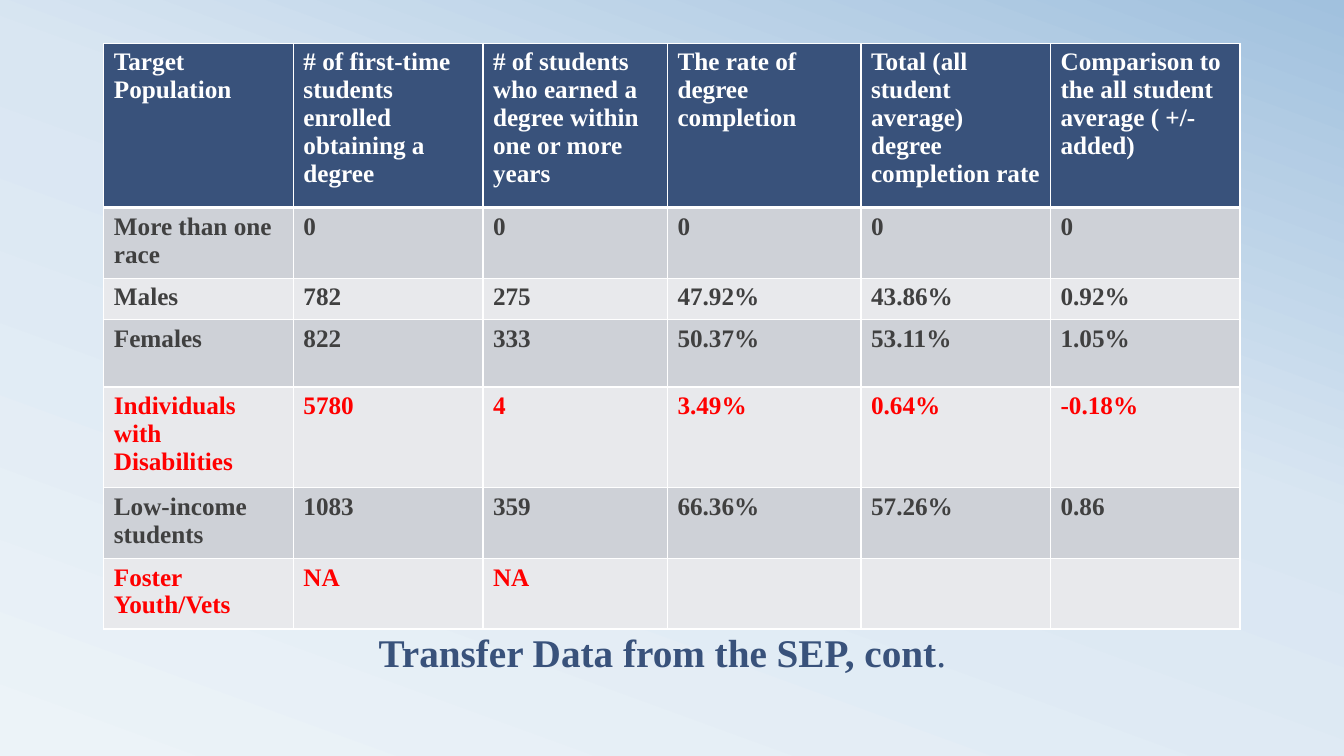
from copy import deepcopy
from dataclasses import dataclass

from lxml.etree import SubElement
from pptx import Presentation
from pptx.dml.color import RGBColor as RGB
from pptx.enum.text import MSO_ANCHOR as Anchor, PP_ALIGN as Align
from pptx.oxml.ns import qn
from pptx.slide import Slide
from pptx.table import _Cell as Cell
from pptx.text.text import _Run as Run
from pptx.util import Inches, Pt


@dataclass(frozen=True)
class Theme:
    font: str = "Times New Roman"
    navy: str = "39527B"
    white: str = "FFFFFF"
    text: str = "404040"
    alert: str = "FF0000"
    bands: tuple[str, str] = ("CED1D7", "E8E9EC")
    backdrop: tuple[tuple[float, str], ...] = ((0, "ECF3F8"), (0.58, "D9E6F2"), (1, "A1C1DE"))
    backdrop_angle: int = 70
    title_size: int = 28
    table_size: int = 18
    rule: int = 1
    header_rule: int = 3


@dataclass(frozen=True)
class Row:
    height: float
    values: tuple[str, ...]
    alert: bool = False


THEME = Theme()
COLUMNS = (1.88, 1.88, 1.83, 1.92, 1.88, 1.88)
ROWS = (
    Row(1.63, ("Target Population", "# of first-time students enrolled obtaining a degree",
               "# of students who earned a degree within one or more years",
               "The rate of degree completion",
               "Total (all student average) degree completion rate",
               "Comparison to the all student average ( +/- added)")),
    Row(0.65, ("More than one race", "0", "0", "0", "0", "0")),
    Row(0.41, ("Males", "782", "275", "47.92%", "43.86%", "0.92%")),
    Row(0.67, ("Females", "822", "333", "50.37%", "53.11%", "1.05%")),
    Row(0.93, ("Individuals with Disabilities", "5780", "4", "3.49%", "0.64%", "-0.18%"), True),
    Row(0.65, ("Low-income students", "1083", "359", "66.36%", "57.26%", "0.86")),
    Row(0.65, ("Foster Youth/Vets", "NA", "NA", "", "", ""), True),
)


def style_run(r: Run, size: int, color: str, bold: bool = True) -> None:
    """Apply the slide's font to a run."""
    r.font.name = THEME.font
    r.font.size = Pt(size)
    r.font.bold = bold
    r.font.color.rgb = RGB.from_string(color)


def draw_backdrop(s: Slide) -> None:
    """Fill the background with the three-stop gradient."""
    fill = s.background.fill
    fill.gradient()
    fill.gradient_angle = THEME.backdrop_angle
    stops = s.element.find(f".//{qn('a:gsLst')}")
    stops.append(deepcopy(stops[-1]))
    for stop, (position, color) in zip(fill.gradient_stops, THEME.backdrop):
        stop.position = position
        stop.color.rgb = RGB.from_string(color)


def draw_borders(cell: Cell, top: int, bottom: int) -> None:
    """Outline a cell in white with the given top and bottom widths."""
    tc_pr = cell._tc.get_or_add_tcPr()
    for side, width in (("L", THEME.rule), ("R", THEME.rule), ("T", top), ("B", bottom)):
        line = SubElement(tc_pr, qn(f"a:ln{side}"), w=str(Pt(width)))
        solid = SubElement(line, qn("a:solidFill"))
        SubElement(solid, qn("a:srgbClr"), val=THEME.white)


def draw_cell(cell: Cell, text: str, color: str, fill: str, top: int, bottom: int) -> None:
    """Write and style one table cell."""
    draw_borders(cell, top, bottom)
    cell.fill.solid()
    cell.fill.fore_color.rgb = RGB.from_string(fill)
    cell.text_frame.text = text
    for r in cell.text_frame.paragraphs[0].runs:
        style_run(r, THEME.table_size, color)


def draw_table(s: Slide) -> None:
    """Draw the completion-rate table."""
    table = s.shapes.add_table(
        len(ROWS), len(COLUMNS), Inches(1.03), Inches(0.43),
        Inches(sum(COLUMNS)), Inches(sum(row.height for row in ROWS))).table
    for column, width in zip(table.columns, COLUMNS):
        column.width = Inches(width)
    for i, row in enumerate(ROWS):
        table.rows[i].height = Inches(row.height)
        body_color = THEME.alert if row.alert else THEME.text
        color, fill = (body_color, THEME.bands[(i - 1) % 2]) if i else (THEME.white, THEME.navy)
        top = THEME.header_rule if i == 1 else THEME.rule
        bottom = THEME.header_rule if i == 0 else THEME.rule
        for j, value in enumerate(row.values):
            draw_cell(table.cell(i, j), value, color, fill, top, bottom)


def draw_title(s: Slide) -> None:
    """Draw the slide title below the table."""
    tf = s.shapes.add_textbox(Inches(0.57), Inches(5.58), Inches(12), Inches(1.17)).text_frame
    tf.word_wrap = True
    tf.vertical_anchor = Anchor.BOTTOM
    p = tf.paragraphs[0]
    p.alignment = Align.CENTER
    p.line_spacing = 0.8
    for text, bold in (("Transfer Data from the SEP, cont", True), (".", False)):
        r = p.add_run()
        r.text = text
        style_run(r, THEME.title_size, THEME.navy, bold)


def main() -> None:
    """Build and save the slide."""
    prs = Presentation()
    prs.slide_width, prs.slide_height = Inches(13.33), Inches(7.5)
    s = prs.slides.add_slide(prs.slide_layouts[6])
    draw_backdrop(s)
    draw_title(s)
    draw_table(s)
    prs.save("out.pptx")


if __name__ == "__main__":
    main()
